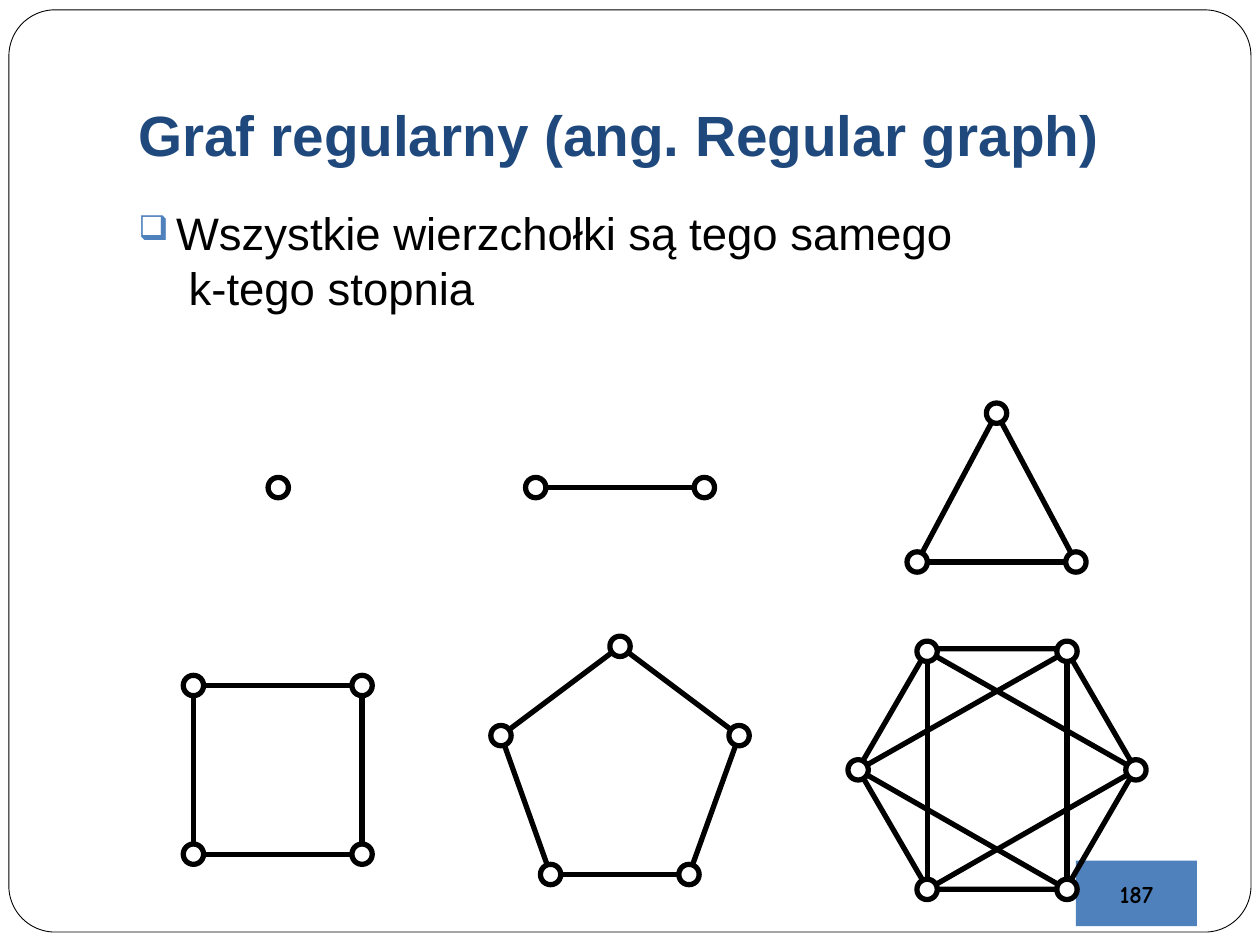
from dataclasses import dataclass

from lxml.etree import SubElement
from pptx import Presentation
from pptx.dml.color import RGBColor as RGB
from pptx.enum.shapes import MSO_CONNECTOR as LINK, MSO_SHAPE as KIND
from pptx.enum.text import MSO_ANCHOR as ANCHOR, PP_ALIGN as ALIGN
from pptx.oxml.ns import qn
from pptx.util import Cm, Pt


@dataclass(frozen=True)
class Theme:
    ink: RGB = RGB(0, 0, 0)
    paper: RGB = RGB(255, 255, 255)
    navy: RGB = RGB(0x1F, 0x49, 0x7D)
    blue: RGB = RGB(0x4F, 0x81, 0xBD)
    font: str = "Arial"
    comic: str = "Comic Neue"
    title: Pt = Pt(32.4)
    body: Pt = Pt(26)
    page: Pt = Pt(14)
    thin: Pt = Pt(0.5)
    thick: Pt = Pt(3)


theme = Theme()
deck = Presentation()
deck.slide_width, deck.slide_height = Cm(25.4), Cm(19.05)
slide = deck.slides.add_slide(deck.slide_layouts[6])
shapes = slide.shapes


def draw(kind, box, fill, width):
    """Add a preset shape; None means no fill or no line."""
    shape = shapes.add_shape(kind, *map(Cm, box))
    shape.shadow.inherit = False
    if fill is None:
        shape.fill.background()
    else:
        shape.fill.solid()
        shape.fill.fore_color.rgb = fill
    if width is None:
        shape.line.fill.background()
    else:
        shape.line.color.rgb = theme.ink
        shape.line.width = width
    return shape


def write(frame, text, font, size, color, bold=False):
    """Set the text of a frame and style its runs."""
    para = frame.paragraphs[0]
    para.text = text
    for run in para.runs:
        run.font.name, run.font.size = font, size
        run.font.bold, run.font.color.rgb = bold, color
    return para


# Slide border
border = draw(KIND.ROUNDED_RECTANGLE, (0.18, 0.2, 25.04, 18.59),
              theme.paper, theme.thin)
border.adjustments[0] = 0.05

# Title
frame = shapes.add_textbox(Cm(2.54), Cm(0.76), Cm(21.59), Cm(2.87)).text_frame
frame.word_wrap = True
frame.vertical_anchor = ANCHOR.BOTTOM
frame.margin_bottom = Cm(0.25)
write(frame, "Graf regularny (ang. Regular graph)",
      theme.font, theme.title, theme.navy, True)

# Definition with a box bullet
frame = shapes.add_textbox(Cm(2.54), Cm(4.01), Cm(21.59), Cm(2.46)).text_frame
frame.word_wrap = True
para = write(frame, "Wszystkie wierzchołki są tego samego\v k-tego stopnia",
             theme.font, theme.body, theme.ink)
para.space_before = Pt(5.8)
props = para._p.get_or_add_pPr()
props.set("marL", str(Cm(0.76)))
props.set("indent", str(Cm(-0.76)))
tint = SubElement(props, qn("a:buClr"))
SubElement(tint, qn("a:srgbClr"), val=str(theme.blue))
SubElement(props, qn("a:buSzPct"), val="75000")
SubElement(props, qn("a:buChar"), char="❑")

# Page number
page = draw(KIND.RECTANGLE, (21.69, 17.35, 2.44, 1.32), theme.blue, None)
frame = page.text_frame
frame.word_wrap = False
frame.vertical_anchor = ANCHOR.MIDDLE
frame.margin_left = frame.margin_right = 0
frame.margin_top = frame.margin_bottom = 0
para = write(frame, "187", theme.comic, theme.page, theme.ink, True)
para.alignment = ALIGN.CENTER

# Outline of the last graph
hexagon = draw(KIND.HEXAGON, (17.3, 13.08, 5.59, 4.85), None, theme.thick)
hexagon.adjustments[0] = 0.29

# Graphs: node centres in cm, and the step from a node to its neighbour
graphs = [
    ([(5.61, 9.83)], 0),
    ([(10.8, 9.83), (14.2, 9.83)], 1),
    ([(18.49, 11.33), (20.09, 8.33), (21.69, 11.33)], 1),
    ([(3.9, 13.82), (7.3, 13.82), (7.3, 17.22), (3.9, 17.22)], 1),
    ([(12.5, 13.03), (14.9, 14.83), (13.89, 17.63), (11.1, 17.63),
      (10.1, 14.83)], 1),
    ([(17.3, 15.52), (18.69, 13.13), (21.51, 13.13), (22.9, 15.52),
      (21.51, 17.93), (18.69, 17.93)], 2),
]
size = 0.41
for nodes, step in graphs:
    count = len(nodes)
    pairs = {frozenset((i, (i + step) % count)) for i in range(count)}
    for start, end in (sorted(pair) for pair in pairs if len(pair) == 2):
        edge = shapes.add_connector(
            LINK.STRAIGHT, *map(Cm, nodes[start] + nodes[end]))
        edge.line.color.rgb = theme.ink
        edge.line.width = theme.thick
        SubElement(edge._element.spPr, qn("a:effectLst"))
    for x, y in nodes:
        draw(KIND.OVAL, (x - size / 2, y - size / 2, size, size),
             theme.paper, theme.thick)

deck.save("out.pptx")
